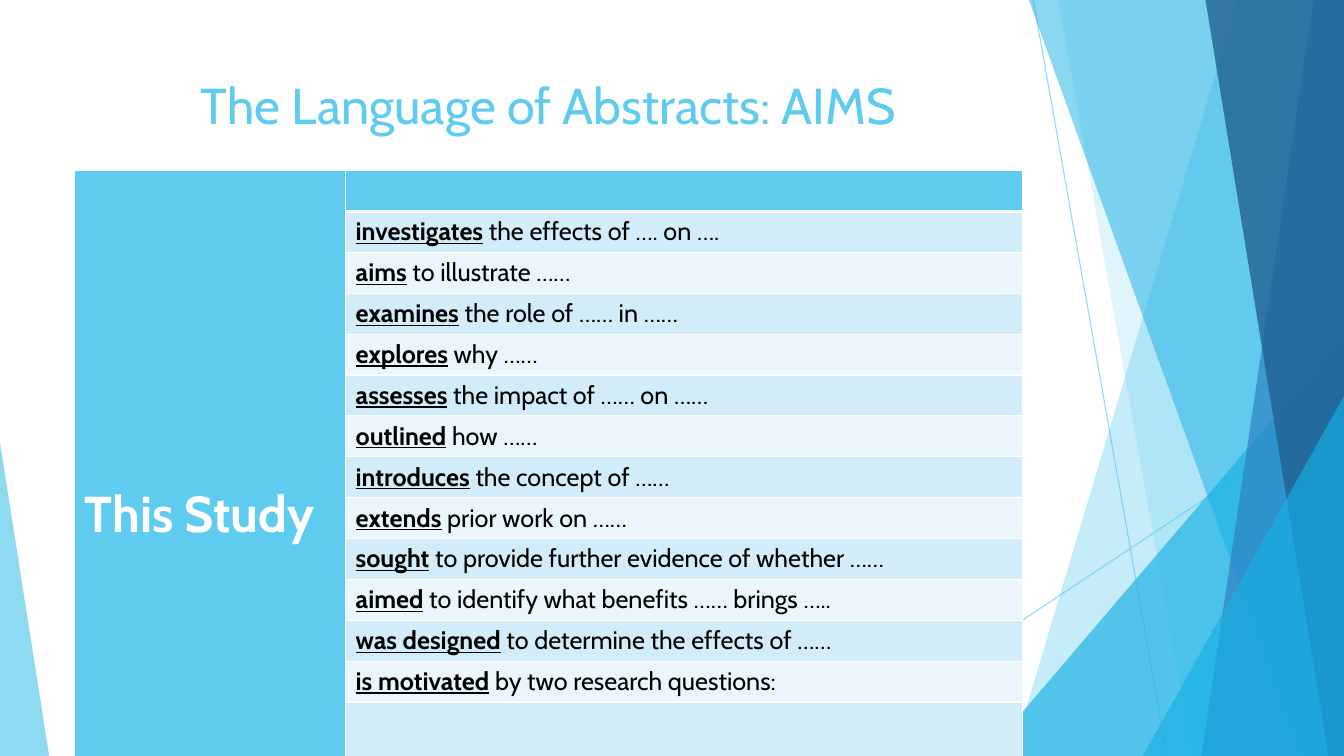
from dataclasses import dataclass

from lxml import etree
from pptx import Presentation
from pptx import util as u
from pptx.dml import color
from pptx.enum import shapes, text
from pptx.oxml import ns

WIDTH, HEIGHT = 33.87, 19.05
SKY, CYAN, BLUE, NAVY, WHITE = "5FCBEF", "17B0E4", "2E83C3", "226292", "FFFFFF"
ROW_FILLS = ("EAF6FC", "D2ECF9")
ROW_HEIGHT, LAST_ROW_HEIGHT = 1.03, 1.36


@dataclass
class Ray:
    x1: float
    y1: float
    x2: float
    y2: float


@dataclass
class Band:
    top_x: float
    bottom_x: float
    fill: str
    alpha: int


@dataclass
class Wedge:
    left: float
    top: float
    right: float
    peak: int
    fill: str
    alpha: int


@dataclass
class Phrase:
    verb: str
    rest: str


RAYS = [Ray(26.04, 0, 29.41, HEIGHT), Ray(WIDTH, 10.24, 20.62, HEIGHT)]
FACETS = [
    Band(31.19, 25.5, SKY, 36),
    Band(26.67, 30.05, SKY, 20),
    Wedge(24.82, 8.46, WIDTH, 1, CYAN, 66),
    Band(25.93, 32.79, CYAN, 50),
    Band(33.1, 30.28, BLUE, 70),
    Band(30.38, 33.48, NAVY, 80),
    Wedge(28.8, 9.98, WIDTH, 1, CYAN, 66),
    Wedge(0, 11.15, 1.24, 0, SKY, 70),
]
PHRASES = [
    Phrase("investigates", " the effects of …. on …."),
    Phrase("aims", " to illustrate ……"),
    Phrase("examines", " the role of …… in ……"),
    Phrase("explores", " why ……"),
    Phrase("assesses", " the impact of …… on ……"),
    Phrase("outlined", " how ……"),
    Phrase("introduces", " the concept of ……"),
    Phrase("extends", " prior work on ……"),
    Phrase("sought", " to provide further evidence of whether ……"),
    Phrase("aimed", " to identify what benefits …… brings ….."),
    Phrase("was designed", " to determine the effects of ……"),
    Phrase("is motivated", " by two research questions:"),
]


def rgb(value: str) -> color.RGBColor:
    return color.RGBColor.from_string(value)


def set_alpha(sp, percent: int) -> None:
    for clr in sp._element.spPr.iter(ns.qn("a:srgbClr")):
        etree.SubElement(clr, ns.qn("a:alpha"), val=str(percent * 1000))


def add_run(p, content: str, size: int, hex_color: str, **formats) -> None:
    r = p.add_run()
    r.text = content
    r.font.color.rgb = rgb(hex_color)
    for name, value in {"name": "Cabin", "size": u.Pt(size), **formats}.items():
        setattr(r.font, name, value)


def draw_ray(s, ray: Ray) -> None:
    ends = [u.Cm(v) for v in (ray.x1, ray.y1, ray.x2, ray.y2)]
    sp = s.shapes.add_connector(shapes.MSO_CONNECTOR.STRAIGHT, *ends)
    sp.line.color.rgb = rgb(SKY)
    sp.line.width = u.Pt(0.75)
    set_alpha(sp, 70)
    etree.SubElement(sp._element.spPr, ns.qn("a:effectLst"))


def draw_facet(s, facet: Band | Wedge) -> None:
    if isinstance(facet, Band):
        corners = [(WIDTH, 0), (WIDTH, HEIGHT), (facet.bottom_x, HEIGHT)]
        builder = s.shapes.build_freeform(u.Cm(facet.top_x), 0)
        builder.add_line_segments([(u.Cm(x), u.Cm(y)) for x, y in corners])
        sp = builder.convert_to_shape()
    else:
        box = (facet.left, facet.top, facet.right - facet.left, HEIGHT - facet.top)
        sp = s.shapes.add_shape(shapes.MSO_SHAPE.ISOSCELES_TRIANGLE, *map(u.Cm, box))
        sp.adjustments[0] = facet.peak
    sp.shadow.inherit = False
    sp.fill.solid()
    sp.fill.fore_color.rgb = rgb(facet.fill)
    sp.line.fill.background()
    set_alpha(sp, facet.alpha)


def style_cell(cell, fill: str, bottom_width: int) -> None:
    tc_pr = cell._tc.get_or_add_tcPr()
    for side, width in {"L": 1, "R": 1, "T": 1, "B": bottom_width}.items():
        ln = etree.SubElement(tc_pr, ns.qn(f"a:ln{side}"), w=str(u.Pt(width)))
        solid = etree.SubElement(ln, ns.qn("a:solidFill"))
        etree.SubElement(solid, ns.qn("a:srgbClr"), val=WHITE)
    cell.fill.solid()
    cell.fill.fore_color.rgb = rgb(fill)


def draw_title(s) -> None:
    sp = s.shapes.add_textbox(u.Cm(1.88), u.Cm(1.7), u.Cm(23.88), u.Cm(1.85))
    tf = sp.text_frame
    tf.word_wrap = True
    tf.vertical_anchor = text.MSO_ANCHOR.MIDDLE
    p = tf.paragraphs[0]
    p.alignment = text.PP_ALIGN.CENTER
    add_run(p, "The Language of Abstracts: AIMS", 36, SKY)


def draw_table(s) -> None:
    count = len(PHRASES) + 2
    height = ROW_HEIGHT * (count - 1) + LAST_ROW_HEIGHT
    table = s.shapes.add_table(
        count, 2, u.Cm(1.88), u.Cm(4.3), u.Cm(23.88), u.Cm(height)
    ).table
    for column, width in zip(table.columns, (6.83, 17.05)):
        column.width = u.Cm(width)
    for row in table.rows:
        row.height = u.Cm(ROW_HEIGHT)
    table.rows[count - 1].height = u.Cm(LAST_ROW_HEIGHT)

    subject = table.cell(0, 0)
    subject.merge(table.cell(count - 1, 0))
    style_cell(subject, SKY, 1)
    subject.vertical_anchor = text.MSO_ANCHOR.MIDDLE
    subject.margin_top = u.Cm(1.2)
    add_run(subject.text_frame.paragraphs[0], "This Study", 36, WHITE, bold=True)

    style_cell(table.cell(0, 1), SKY, 3)
    for i in range(1, count):
        style_cell(table.cell(i, 1), ROW_FILLS[i % 2], 1)
    for i, phrase in enumerate(PHRASES, start=1):
        p = table.cell(i, 1).text_frame.paragraphs[0]
        add_run(p, phrase.verb, 18, "000000", bold=True, underline=True)
        add_run(p, phrase.rest, 18, "000000", bold=False, underline=False)


def main() -> None:
    prs = Presentation()
    prs.slide_width, prs.slide_height = u.Cm(WIDTH), u.Cm(HEIGHT)
    s = prs.slides.add_slide(prs.slide_layouts[6])
    for ray in RAYS:
        draw_ray(s, ray)
    for facet in FACETS:
        draw_facet(s, facet)
    draw_title(s)
    draw_table(s)
    prs.save("out.pptx")


if __name__ == "__main__":
    main()
